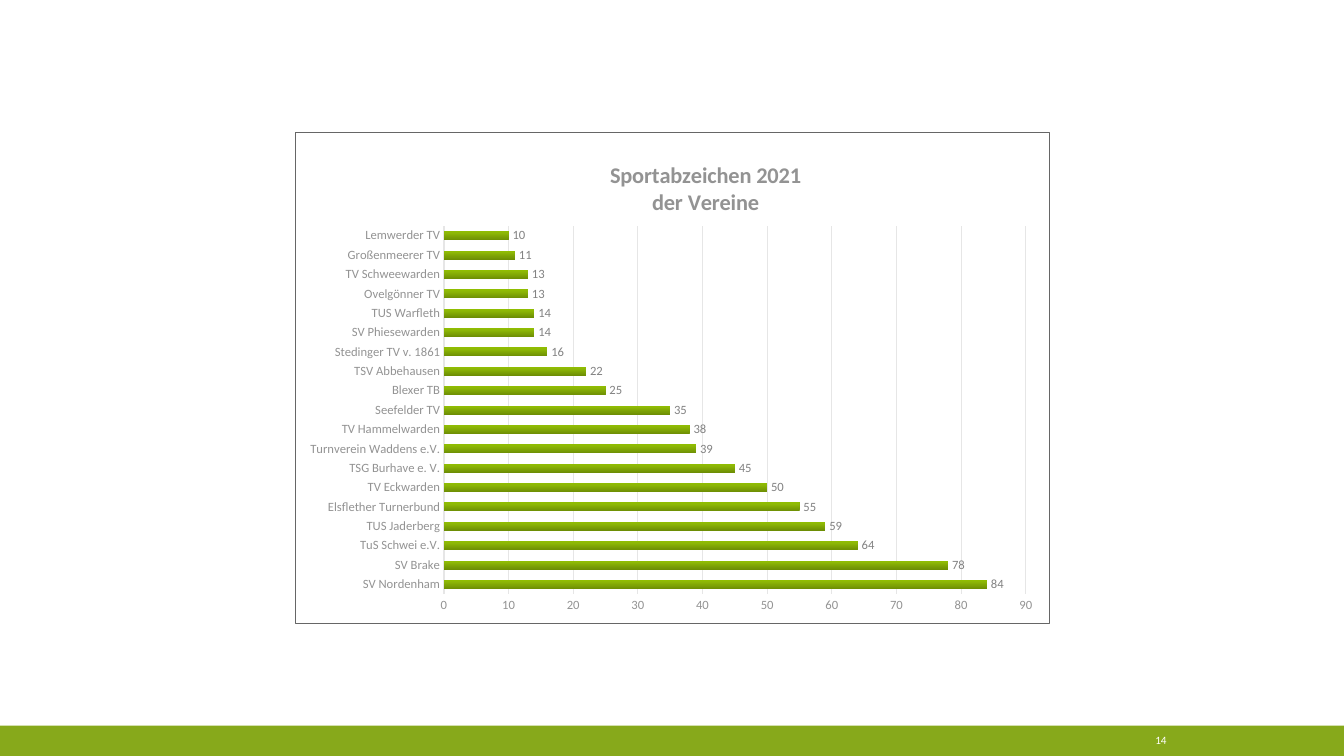
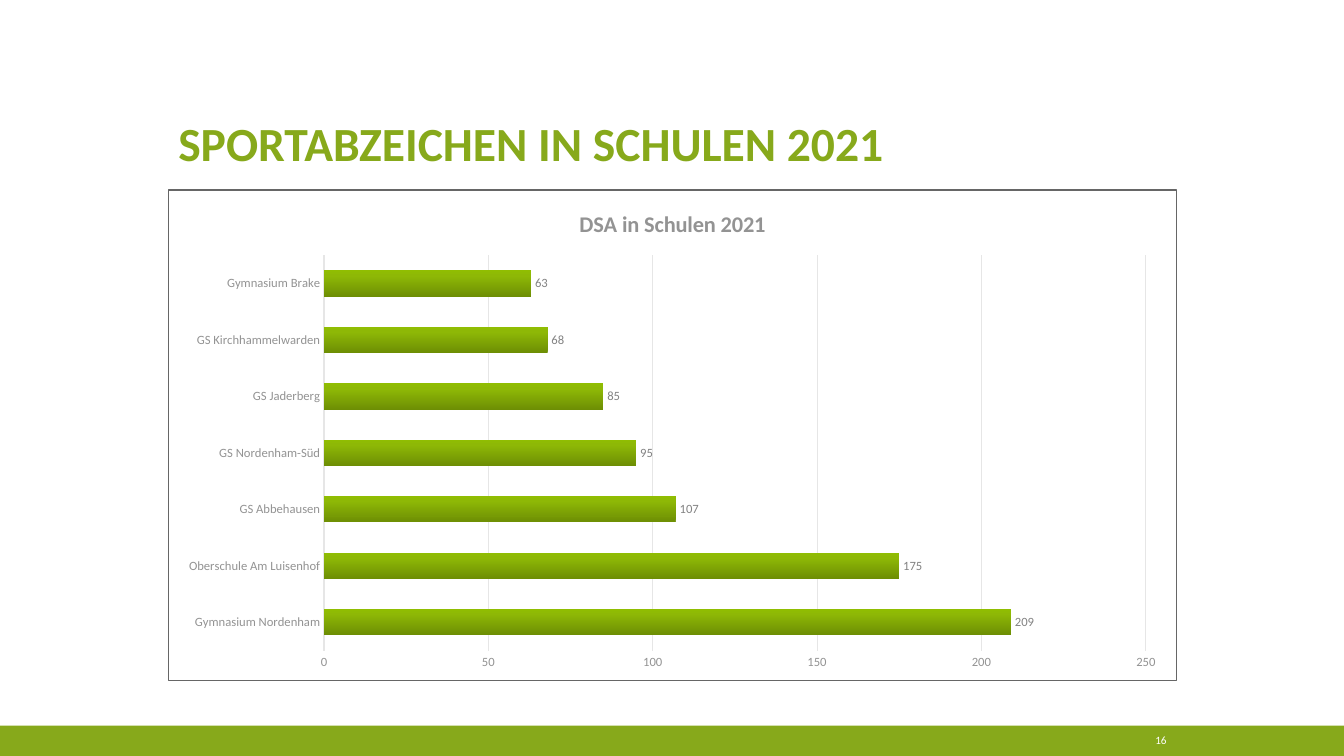
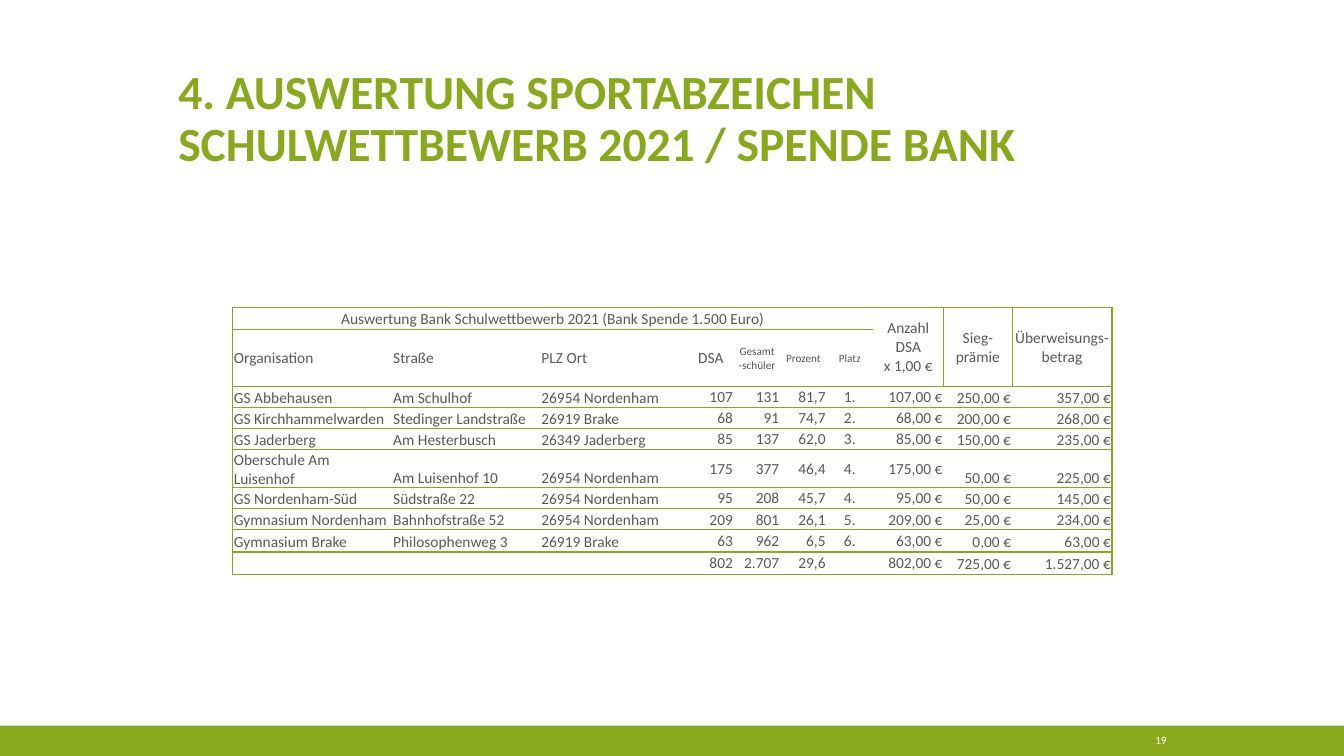
import lxml.etree
import pptx
import pptx.chart.data
import pptx.dml.color
import pptx.enum.chart
import pptx.enum.shapes
import pptx.enum.text
import pptx.oxml
import pptx.oxml.ns
import pptx.util

Inches, Pt = pptx.util.Inches, pptx.util.Pt
qn = pptx.oxml.ns.qn
ALIGN = pptx.enum.text.PP_ALIGN
ANCHOR = pptx.enum.text.MSO_ANCHOR

FONT = "Calibri"
COLORS = {
    "green": "87A91B", "white": "FFFFFF", "text": "595959", "axis": "939393",
    "label": "828282", "grid": "E6E6E6", "border": "666666",
}
BAR_STOPS = [(0, "6D8E04"), (80, "8EB806"), (100, "90BD02")]

CLUBS = [
    ("SV Nordenham", 84), ("SV Brake", 78), ("TuS Schwei e.V.", 64),
    ("TUS Jaderberg", 59), ("Elsflether Turnerbund", 55), ("TV Eckwarden", 50),
    ("TSG Burhave e. V.", 45), ("Turnverein Waddens e.V.", 39),
    ("TV Hammelwarden", 38), ("Seefelder TV", 35), ("Blexer TB", 25),
    ("TSV Abbehausen", 22), ("Stedinger TV v. 1861", 16),
    ("SV Phiesewarden", 14), ("TUS Warfleth", 14), ("Ovelgönner TV", 13),
    ("TV Schweewarden", 13), ("Großenmeerer TV", 11), ("Lemwerder TV", 10),
]
SCHOOLS = [
    ("Gymnasium Nordenham", 209), ("Oberschule Am Luisenhof", 175),
    ("GS Abbehausen", 107), ("GS Nordenham-Süd", 95), ("GS Jaderberg", 85),
    ("GS Kirchhammelwarden", 68), ("Gymnasium Brake", 63),
]

COL_WIDTHS = [1.58, 1.47, 1.46, 0.46, 0.46, 0.46, 0.46, 0.7, 0.68, 0.99]
ROW_HEIGHTS = [0.22, 0.46] + [0.21] * 6 + [0.22] * 2
HEADER_ROWS = 2
CONTEST = [
    ["Auswertung Bank Schulwettbewerb 2021 (Bank Spende 1.500 Euro)", "", "", "", "", "", "",
     "Anzahl DSA\nx 1,00 €", "Sieg-prämie", "Überweisungs-\nbetrag"],
    ["Organisation", "Straße", "PLZ Ort", "DSA", "Gesamt\n-schüler", "Prozent", "Platz",
     "", "", ""],
    ["GS Abbehausen", "Am Schulhof", "26954 Nordenham", "107", "131", "81,7", "1.",
     "107,00 €", "250,00 €", "357,00 €"],
    ["GS Kirchhammelwarden", "Stedinger Landstraße", "26919 Brake", "68", "91", "74,7", "2.",
     "68,00 €", "200,00 €", "268,00 €"],
    ["GS Jaderberg", "Am Hesterbusch", "26349 Jaderberg", "85", "137", "62,0", "3.",
     "85,00 €", "150,00 €", "235,00 €"],
    ["Oberschule Am Luisenhof", "Am Luisenhof 10", "26954 Nordenham", "175", "377", "46,4", "4.",
     "175,00 €", "50,00 €", "225,00 €"],
    ["GS Nordenham-Süd", "Südstraße 22", "26954 Nordenham", "95", "208", "45,7", "4.",
     "95,00 €", "50,00 €", "145,00 €"],
    ["Gymnasium Nordenham", "Bahnhofstraße 52", "26954 Nordenham", "209", "801", "26,1", "5.",
     "209,00 €", "25,00 €", "234,00 €"],
    ["Gymnasium Brake", "Philosophenweg 3", "26919 Brake", "63", "962", "6,5", "6.",
     "63,00 €", "0,00 €", "63,00 €"],
    ["", "", "", "802", "2.707", "29,6", "", "802,00 €", "725,00 €", "1.527,00 €"],
]


def rgb(name):
    return pptx.dml.color.RGBColor.from_string(COLORS[name])


def style_font(font, size, color, bold=False):
    font.name, font.size, font.bold = FONT, Pt(size), bold
    font.color.rgb = rgb(color)


def add_text(s, box, text, size, color, anchor, align=ALIGN.LEFT, bold=False):
    tf = s.shapes.add_textbox(*map(Inches, box)).text_frame
    tf.word_wrap = True
    tf.vertical_anchor = anchor
    p = tf.paragraphs[0]
    p.text = text
    p.alignment = align
    style_font(p.runs[0].font, size, color, bold)
    return p


def add_slide(prs, number, title=None):
    """Slide with the footer band, its number and an optional title."""
    s = prs.slides.add_slide(prs.slide_layouts[6])
    band = s.shapes.add_shape(pptx.enum.shapes.MSO_SHAPE.RECTANGLE,
                              0, Inches(7.2), prs.slide_width, Inches(0.3))
    band.shadow.inherit = False
    band.fill.solid()
    band.fill.fore_color.rgb = rgb("green")
    band.line.fill.background()
    if title:
        p = add_text(s, (1.67, 0.5, 10, 1.25), title, 34, "green", ANCHOR.BOTTOM, bold=True)
        p.line_spacing = 0.9
    add_text(s, (10.82, 7.22, 0.85, 0.25), str(number), 8, "white", ANCHOR.MIDDLE, ALIGN.RIGHT)
    return s


# Chart parts
def set_layout(parent, index, **values):
    """Fix the place of a chart part, in fractions of the chart."""
    old = parent.find(qn("c:layout"))
    if old is not None:
        parent.remove(old)
    layout = lxml.etree.Element(qn("c:layout"))
    manual = lxml.etree.SubElement(layout, qn("c:manualLayout"))
    if "w" in values:
        lxml.etree.SubElement(manual, qn("c:layoutTarget"), val="inner")
    for key in ("x", "y"):
        lxml.etree.SubElement(manual, qn(f"c:{key}Mode"), val="edge")
    for key, value in values.items():
        lxml.etree.SubElement(manual, qn(f"c:{key}"), val=f"{value:.4f}")
    parent.insert(index, layout)


def set_chart_frame(chart):
    sp_pr = pptx.oxml.parse_xml(
        f'<c:spPr {pptx.oxml.ns.nsdecls("c", "a")}>'
        f'<a:solidFill><a:srgbClr val="{COLORS["white"]}"/></a:solidFill>'
        f'<a:ln w="{Pt(0.75)}"><a:solidFill><a:srgbClr val="{COLORS["border"]}"/></a:solidFill>'
        '</a:ln></c:spPr>')
    chart._chartSpace.find(qn("c:chart")).addnext(sp_pr)


def set_bar_gradient(series):
    series.format.fill.gradient()
    grad = series._element.find(qn("c:spPr")).find(qn("a:gradFill"))
    stops = "".join(f'<a:gs pos="{pos * 1000}"><a:srgbClr val="{color}"/></a:gs>'
                    for pos, color in BAR_STOPS)
    new = pptx.oxml.parse_xml(
        f'<a:gradFill {pptx.oxml.ns.nsdecls("a")} rotWithShape="1"><a:gsLst>{stops}</a:gsLst>'
        '<a:lin ang="16200000" scaled="0"/></a:gradFill>')
    grad.getparent().replace(grad, new)


def style_axis(axis):
    axis.major_tick_mark = axis.minor_tick_mark = pptx.enum.chart.XL_TICK_MARK.NONE
    style_font(axis.tick_labels.font, 9, "axis")


def add_bar_chart(s, box, title, rows, plot_box, top, step, title_at=None):
    """Bar chart; plot_box and title_at are inches inside the chart box."""
    data = pptx.chart.data.CategoryChartData()
    data.categories = [name for name, _ in rows]
    data.add_series("Series 1", [value for _, value in rows])
    chart = s.shapes.add_chart(pptx.enum.chart.XL_CHART_TYPE.BAR_CLUSTERED,
                               *map(Inches, box), data).chart
    style_font(chart.font, 10, "text")
    set_chart_frame(chart)
    chart.has_legend = False
    width, height = box[2:]

    # Title
    chart.has_title = True
    tf = chart.chart_title.text_frame
    tf.text = title
    for p in tf.paragraphs:
        style_font(p.runs[0].font, 16, "axis", bold=True)
    chart.chart_title.include_in_layout = False
    if title_at:
        set_layout(chart.chart_title._element, 1,
                   x=title_at[0] / width, y=title_at[1] / height)

    # Axes
    cat, val = chart.category_axis, chart.value_axis
    style_axis(cat)
    cat.format.line.color.rgb = rgb("grid")
    cat.format.line.width = Pt(1)
    style_axis(val)
    val.format.line.fill.background()
    val.minimum_scale, val.maximum_scale, val.major_unit = 0, top, step
    val.has_major_gridlines = True
    val.major_gridlines.format.line.color.rgb = rgb("grid")
    val.major_gridlines.format.line.width = Pt(0.75)

    # Bars and values
    plot = chart.plots[0]
    plot.gap_width, plot.overlap = 115, -20
    plot.vary_by_categories = False
    set_bar_gradient(plot.series[0])
    labels = plot.series[0].data_labels
    labels.show_value = True
    labels.position = pptx.enum.chart.XL_LABEL_POSITION.OUTSIDE_END
    style_font(labels.font, 9, "label")
    x, y, w, h = plot_box
    set_layout(chart._chartSpace.find(qn("c:chart")).find(qn("c:plotArea")), 0,
               x=x / width, y=y / height, w=w / width, h=h / height)


# Table parts
def set_borders(cell, sides):
    """Green lines on the given sides (of L, R, T, B), none on the others."""
    tc_pr = cell._tc.get_or_add_tcPr()
    for i, side in enumerate("LRTB"):
        ln = lxml.etree.Element(qn(f"a:ln{side}"), w=str(Pt(1)))
        if side in sides:
            fill = lxml.etree.SubElement(ln, qn("a:solidFill"))
            lxml.etree.SubElement(fill, qn("a:srgbClr"), val=COLORS["green"])
        else:
            lxml.etree.SubElement(ln, qn("a:noFill"))
        tc_pr.insert(i, ln)


def border_sides(r, c):
    header = r < HEADER_ROWS
    sides = set("TB")
    if c >= 7 and header:
        sides.remove("B" if r == 0 else "T")
    if c == 0 or (header and c >= 8):
        sides.add("L")
    if c == 9 or (header and c in (7, 8)):
        sides.add("R")
    return sides


def cell_align(r, c):
    if c == 6 or r == 0 or (r == 1 and c > 2):
        return ALIGN.CENTER
    return ALIGN.LEFT if c < 3 else ALIGN.RIGHT


def fill_cell(cell, text, r, c):
    cell.fill.solid()
    cell.fill.fore_color.rgb = rgb("white")
    set_borders(cell, border_sides(r, c))
    cell.margin_left = cell.margin_right = cell.margin_top = Inches(0.01)
    cell.margin_bottom = 0
    middle = r < HEADER_ROWS or 3 <= c <= 7
    cell.vertical_anchor = ANCHOR.MIDDLE if middle else ANCHOR.BOTTOM
    size = 8 if r == 1 and 4 <= c <= 6 else 11
    p = cell.text_frame.paragraphs[0]
    p.alignment = cell_align(r, c)
    if text:
        p.text = text
        for run in p.runs:
            style_font(run.font, size, "text")
    else:
        lxml.etree.SubElement(p._p, qn("a:endParaRPr"), sz=str(size * 100))


def add_contest_table(s, box):
    table = s.shapes.add_table(len(CONTEST), len(COL_WIDTHS), *map(Inches, box)).table
    table.first_row = table.horz_banding = False
    for column, width in zip(table.columns, COL_WIDTHS):
        column.width = Inches(width)
    for row, height in zip(table.rows, ROW_HEIGHTS):
        row.height = Inches(height)
    for r, texts in enumerate(CONTEST):
        for c, text in enumerate(texts):
            fill_cell(table.cell(r, c), text, r, c)
    table.cell(0, 0).merge(table.cell(0, 6))
    for c in (7, 8, 9):
        table.cell(0, c).merge(table.cell(1, c))


def main():
    prs = pptx.Presentation()
    prs.slide_width, prs.slide_height = Inches(13.33), Inches(7.5)

    s = add_slide(prs, 14)
    add_bar_chart(s, (2.93, 1.31, 7.48, 4.88), "Sportabzeichen 2021\nder Vereine", CLUBS,
                  (1.47, 0.93, 5.78, 3.66), 90, 10, title_at=(3.09, 0.25))

    s = add_slide(prs, 16, "SPORTABZEICHEN IN SCHULEN 2021")
    add_bar_chart(s, (1.67, 1.88, 10, 4.88), "DSA in Schulen 2021", SCHOOLS,
                  (1.54, 0.65, 8.16, 3.93), 250, 50)

    s = add_slide(prs, 19, "4. AUSWERTUNG SPORTABZEICHEN SCHULWETTBEWERB 2021 / SPENDE BANK")
    add_contest_table(s, (2.31, 3.05, 8.71, 2.53))

    prs.save("out.pptx")


if __name__ == "__main__":
    main()
